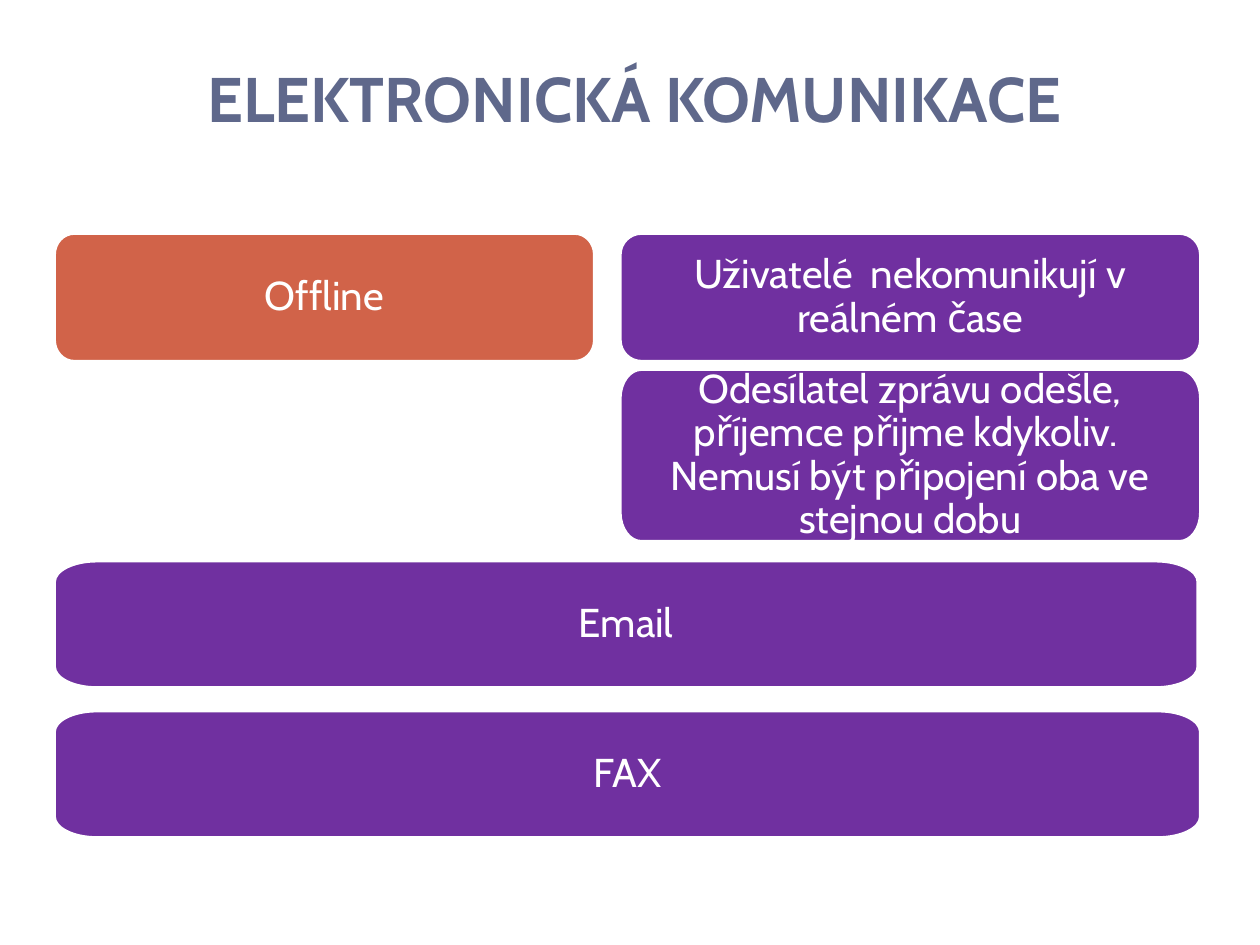
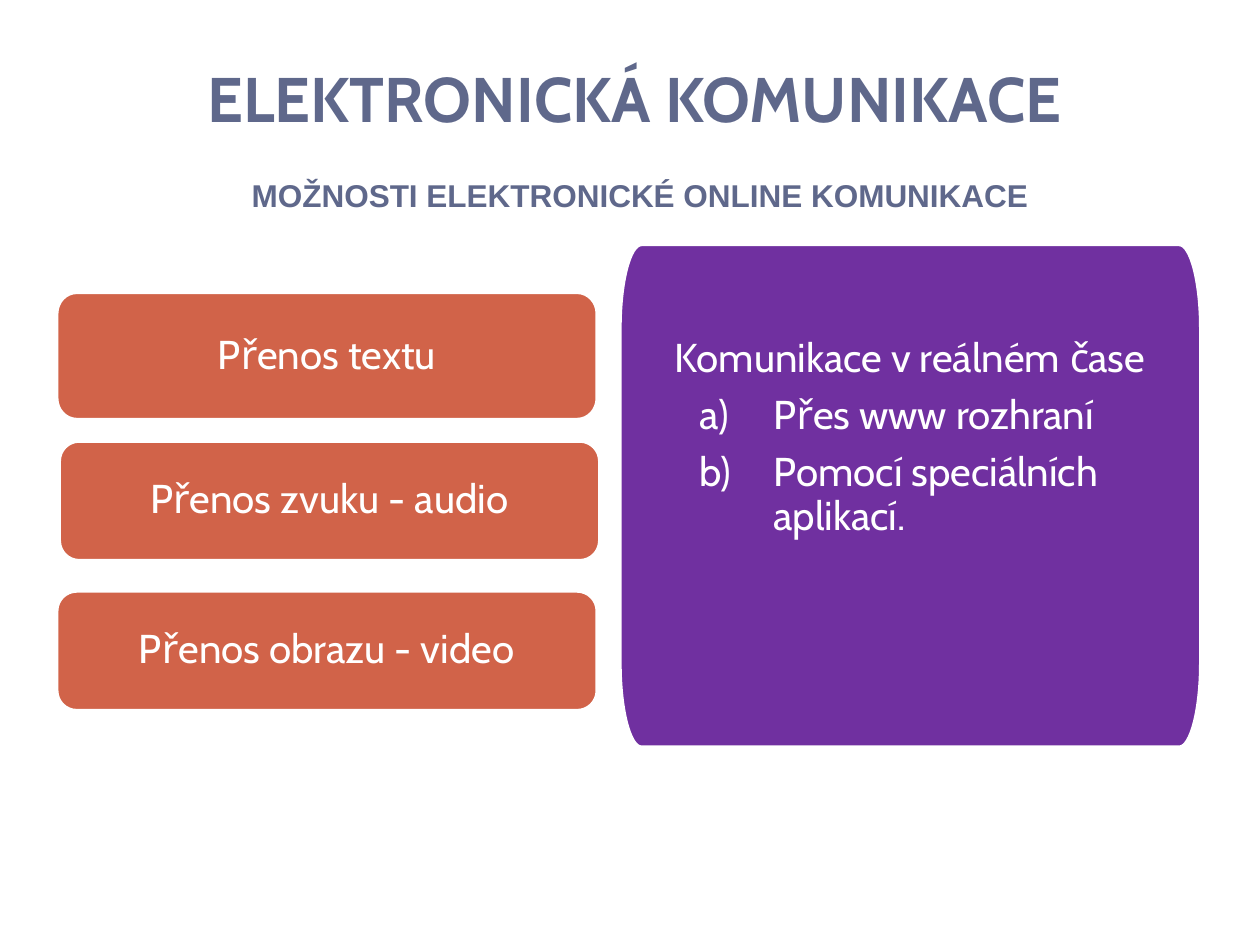
import pptx
import pptx.dml.color
import pptx.enum.text
import pptx.util
from lxml import etree
from pptx.oxml.ns import qn

Inches = pptx.util.Inches
Pt = pptx.util.Pt
ALIGN = pptx.enum.text.PP_ALIGN
ANCHOR = pptx.enum.text.MSO_ANCHOR

COLOURS = {"heading": "5F688B", "detail": "7030A0", "topic": "D16349", "white": "FFFFFF"}
HEADING_FONT = {"name": "Cabin", "size": Pt(36), "bold": True}
SUBHEADING_FONT = {"name": "Arial", "size": Pt(18), "bold": True}
PANEL_FONT = {"name": "Cabin", "size": Pt(23), "bold": False}
CENTRED = {"alignment": ALIGN.CENTER, "line_spacing": 0.9}
LISTED = {"alignment": ALIGN.LEFT, "line_spacing": 0.9, "space_before": Pt(7.7)}
PANEL_FRAME = {
    "word_wrap": True,
    "vertical_anchor": ANCHOR.MIDDLE,
    "margin_left": Inches(0.14),
    "margin_right": Inches(0.14),
    "margin_top": Inches(0.1),
    "margin_bottom": Inches(0.1),
}
LEFT, RIGHT_COLUMN = 0.43, 4.92
TOPIC_WIDTH, DETAIL_WIDTH = 4.29, 4.61
CORNER_X, CORNER_Y = 1 / 27, 1 / 6
ARC_PULL = 0.55


def rgb(colour):
    """Return the named colour of the palette."""
    return pptx.dml.color.RGBColor.from_string(COLOURS[colour])


def apply_format(target, values):
    """Set every attribute in values on target."""
    for attribute, value in values.items():
        setattr(target, attribute, value)


def write(paragraph, text, font, colour, layout):
    """Write one formatted run into a paragraph."""
    run = paragraph.add_run()
    run.text = text
    apply_format(run.font, font)
    run.font.color.rgb = rgb(colour)
    apply_format(paragraph, layout)


def add_heading(slide, box, text, font, frame_format, layout):
    """Place a centred heading in the given box."""
    frame = slide.shapes.add_textbox(*map(Inches, box)).text_frame
    apply_format(frame, {"word_wrap": True, **frame_format})
    write(frame.paragraphs[0], text, font, "heading", {"alignment": ALIGN.CENTER, **layout})


def bevelled_outline(box):
    """Return the eight points where the sides of a box meet its corners."""
    left, top, width, height = box
    right, bottom = left + width, top + height
    near_x, far_x = left + width * CORNER_X, right - width * CORNER_X
    near_y, far_y = top + height * CORNER_Y, bottom - height * CORNER_Y
    points = [(left, near_y), (near_x, top), (far_x, top), (right, near_y),
              (right, far_y), (far_x, bottom), (near_x, bottom), (left, far_y)]
    return [(Inches(x), Inches(y)) for x, y in points]


def round_corners(panel):
    """Turn the four corner cuts of a panel into curves."""
    points = [(int(point.get("x")), int(point.get("y")))
              for point in panel._element.iter(qn("a:pt"))]
    cuts = list(panel._element.iter(qn("a:lnTo")))[::2]
    for index, cut in enumerate(cuts):
        start, end = points[2 * index:2 * index + 2]
        corner = (end[0], start[1]) if index % 2 else (start[0], end[1])
        controls = [[round(a + ARC_PULL * (c - a)) for a, c in zip(anchor, corner)]
                    for anchor in (start, end)]
        curve = etree.Element(qn("a:cubicBezTo"))
        for x, y in [*controls, end]:
            etree.SubElement(curve, qn("a:pt"), x=str(x), y=str(y))
        cut.getparent().replace(cut, curve)


def add_panel(slide, box, text, colour="detail"):
    """Place a rounded panel with centred text and return its text frame."""
    start, *rest = bevelled_outline(box)
    builder = slide.shapes.build_freeform(*start)
    builder.add_line_segments(rest, close=True)
    panel = builder.convert_to_shape()
    round_corners(panel)
    panel.shadow.inherit = False
    panel.fill.solid()
    panel.fill.fore_color.rgb = rgb(colour)
    panel.line.color.rgb = rgb("white")
    panel.line.width = Pt(2)
    apply_format(panel.text_frame, PANEL_FRAME)
    write(panel.text_frame.paragraphs[0], text, PANEL_FONT, "white", CENTRED)
    return panel.text_frame


def add_lettered_item(frame, text):
    """Append an item lettered a), b) and so on."""
    item = frame.add_paragraph()
    write(item, text, PANEL_FONT, "white", LISTED)
    properties = item._p.get_or_add_pPr()
    properties.set("marL", str(Inches(1.08)))
    properties.set("indent", str(Inches(-0.59)))
    etree.SubElement(properties, qn("a:buFont"), typeface="+mj-lt")
    etree.SubElement(properties, qn("a:buAutoNum"), type="alphaLcParenR")


def add_titled_slide(deck):
    """Add a blank slide with the shared title."""
    slide = deck.slides.add_slide(deck.slide_layouts[6])
    add_heading(slide, (LEFT, 0.44, 9.21, 0.68), "ELEKTRONICKÁ KOMUNIKACE", HEADING_FONT,
                {"vertical_anchor": ANCHOR.BOTTOM}, {"line_spacing": Pt(20)})
    return slide


def build_offline_slide(deck):
    """Build the slide on offline communication."""
    slide = add_titled_slide(deck)
    add_panel(slide, (RIGHT_COLUMN, 1.85, DETAIL_WIDTH, 1.02),
              "Uživatelé  nekomunikují v reálném čase")
    for top, width, service in [(5.64, 9.1, "FAX"), (4.45, 9.08, "Email")]:
        add_panel(slide, (LEFT, top, width, 1.01), service)
    add_panel(slide, (RIGHT_COLUMN, 2.93, DETAIL_WIDTH, 1.37),
              "Odesílatel zprávu odešle, příjemce přijme kdykoliv.  "
              "Nemusí být připojení oba ve stejnou dobu")
    add_panel(slide, (LEFT, 1.85, TOPIC_WIDTH, 1.02), "Offline", "topic")


def build_online_slide(deck):
    """Build the slide on online communication."""
    slide = add_titled_slide(deck)
    realtime = add_panel(slide, (RIGHT_COLUMN, 1.94, DETAIL_WIDTH, 3.99),
                         "Komunikace v reálném čase")
    realtime.margin_bottom = Inches(1.01)
    for way in ("Přes www rozhraní", "Pomocí speciálních aplikací."):
        add_lettered_item(realtime, way)
    add_panel(slide, (0.45, 2.32, TOPIC_WIDTH, 1.01), "Přenos textu", "topic")
    add_panel(slide, (0.45, 4.69, TOPIC_WIDTH, 0.95), "Přenos obrazu - video", "topic")
    add_heading(slide, (0.98, 1.35, 8.11, 0.4), "MOŽNOSTI ELEKTRONICKÉ ONLINE KOMUNIKACE",
                SUBHEADING_FONT, {"margin_left": Inches(0.19)}, {})
    add_panel(slide, (0.47, 3.5, TOPIC_WIDTH, 0.95), "Přenos zvuku - audio", "topic")


def main():
    """Build and save the presentation."""
    deck = pptx.Presentation()
    deck.slide_width, deck.slide_height = Inches(10), Inches(7.5)
    build_offline_slide(deck)
    build_online_slide(deck)
    deck.save("out.pptx")


if __name__ == "__main__":
    main()
